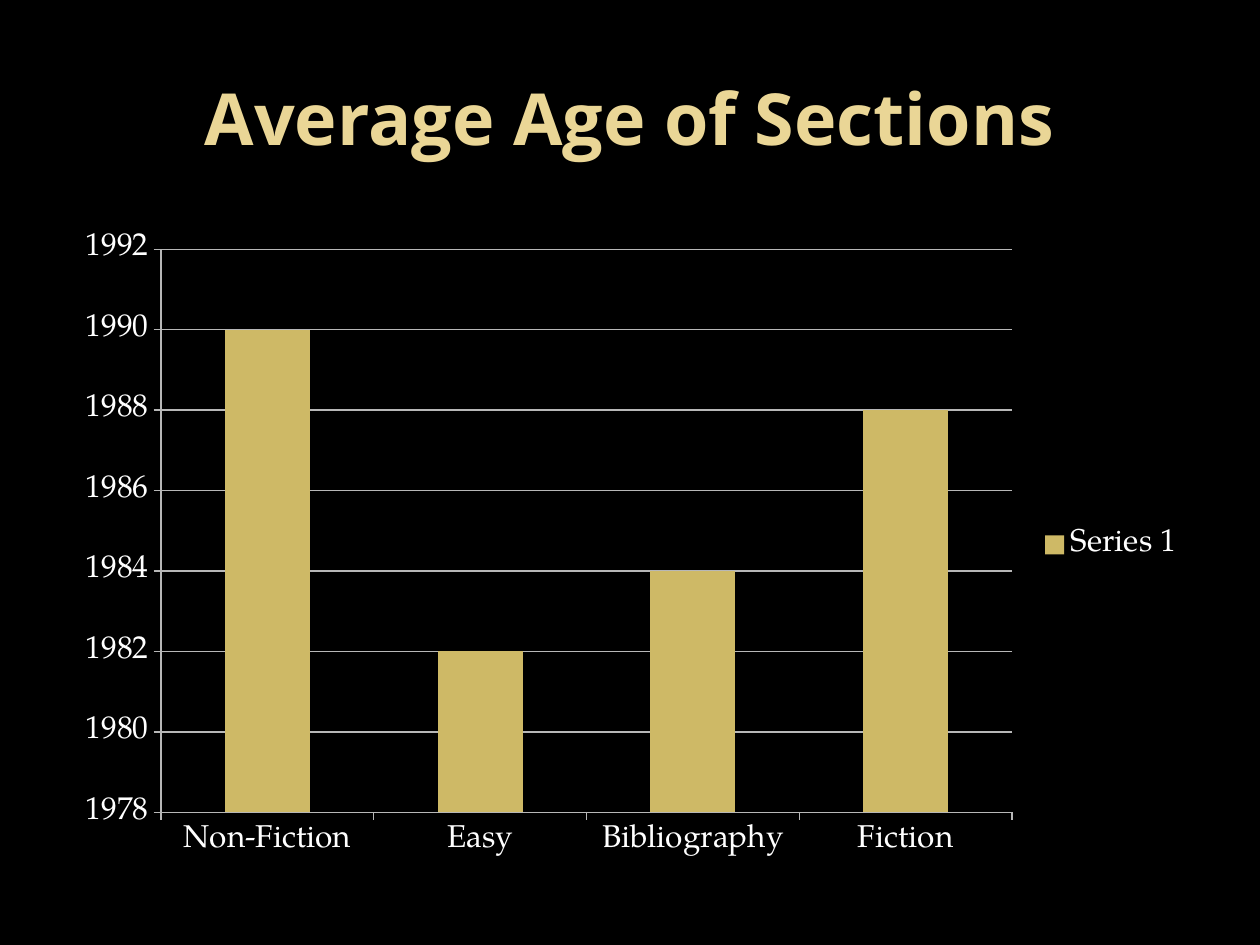
from pptx import Presentation
from pptx.chart.data import CategoryChartData
from pptx.dml.color import RGBColor
from pptx.enum.chart import XL_CHART_TYPE, XL_LEGEND_POSITION, XL_TICK_MARK
from pptx.enum.text import MSO_ANCHOR, PP_ALIGN
from pptx.util import Inches, Pt

COLUMNS = XL_CHART_TYPE.COLUMN_CLUSTERED
LEGEND_RIGHT = XL_LEGEND_POSITION.RIGHT
TICK_OUTSIDE, TICK_NONE = XL_TICK_MARK.OUTSIDE, XL_TICK_MARK.NONE
MIDDLE, CENTER = MSO_ANCHOR.MIDDLE, PP_ALIGN.CENTER

COLORS = {"background": "000000", "title": "EAD696", "text": "FFFFFF",
          "bar": "CEB966", "line": "B7B7B7"}
TITLE_FONT, CHART_FONT = "Open Sans", "TeX Gyre Pagella"

TITLE = "Average Age of Sections"
SERIES_NAME = "Series 1"
SECTION_YEARS = {"Non-Fiction": 1990, "Easy": 1982,
                 "Bibliography": 1984, "Fiction": 1988}
FIRST_YEAR, LAST_YEAR, YEAR_STEP = 1978, 1992, 2

TITLE_AREA = (0.5, 0.3, 9, 1.25)
CHART_AREA = (0.5, 1.75, 9, 5.15)


def color(name):
    return RGBColor.from_string(COLORS[name])


def set_font(font, name, size, color_name, bold=False):
    font.name = name
    font.size = Pt(size)
    font.bold = bold
    font.color.rgb = color(color_name)


def add_text(slide, text, area, font, size, color_name, bold=False):
    box = slide.shapes.add_textbox(*map(Inches, area))
    frame = box.text_frame
    frame.word_wrap = True
    frame.vertical_anchor = MIDDLE
    para = frame.paragraphs[0]
    para.alignment = CENTER
    span = para.add_run()
    span.text = text
    set_font(span.font, font, size, color_name, bold)


def style_line(line):
    line.color.rgb = color("line")
    line.width = Pt(0.75)


def add_age_chart(slide):
    data = CategoryChartData(number_format="General")
    data.categories = list(SECTION_YEARS)
    data.add_series(SERIES_NAME, list(SECTION_YEARS.values()))
    chart = slide.shapes.add_chart(COLUMNS, *map(Inches, CHART_AREA), data).chart
    set_font(chart.font, CHART_FONT, 18, "text")
    chart.has_title = False
    chart.has_legend = True
    chart.legend.position = LEGEND_RIGHT
    chart.legend.include_in_layout = False

    plot = chart.plots[0]
    plot.vary_by_categories = False
    plot.gap_width = 150
    bars = plot.series[0].format.fill
    bars.solid()
    bars.fore_color.rgb = color("bar")

    for axis in (chart.category_axis, chart.value_axis):
        axis.major_tick_mark = TICK_OUTSIDE
        axis.minor_tick_mark = TICK_NONE
        style_line(axis.format.line)
    years = chart.value_axis
    years.minimum_scale, years.maximum_scale = FIRST_YEAR, LAST_YEAR
    years.major_unit = YEAR_STEP
    years.has_major_gridlines = True
    style_line(years.major_gridlines.format.line)


def main():
    deck = Presentation()
    deck.slide_width, deck.slide_height = Inches(10), Inches(7.5)
    slide = deck.slides.add_slide(deck.slide_layouts[6])
    slide.background.fill.solid()
    slide.background.fill.fore_color.rgb = color("background")
    add_text(slide, TITLE, TITLE_AREA, font=TITLE_FONT, size=41,
             color_name="title", bold=True)
    add_age_chart(slide)
    deck.save("out.pptx")


if __name__ == "__main__":
    main()
